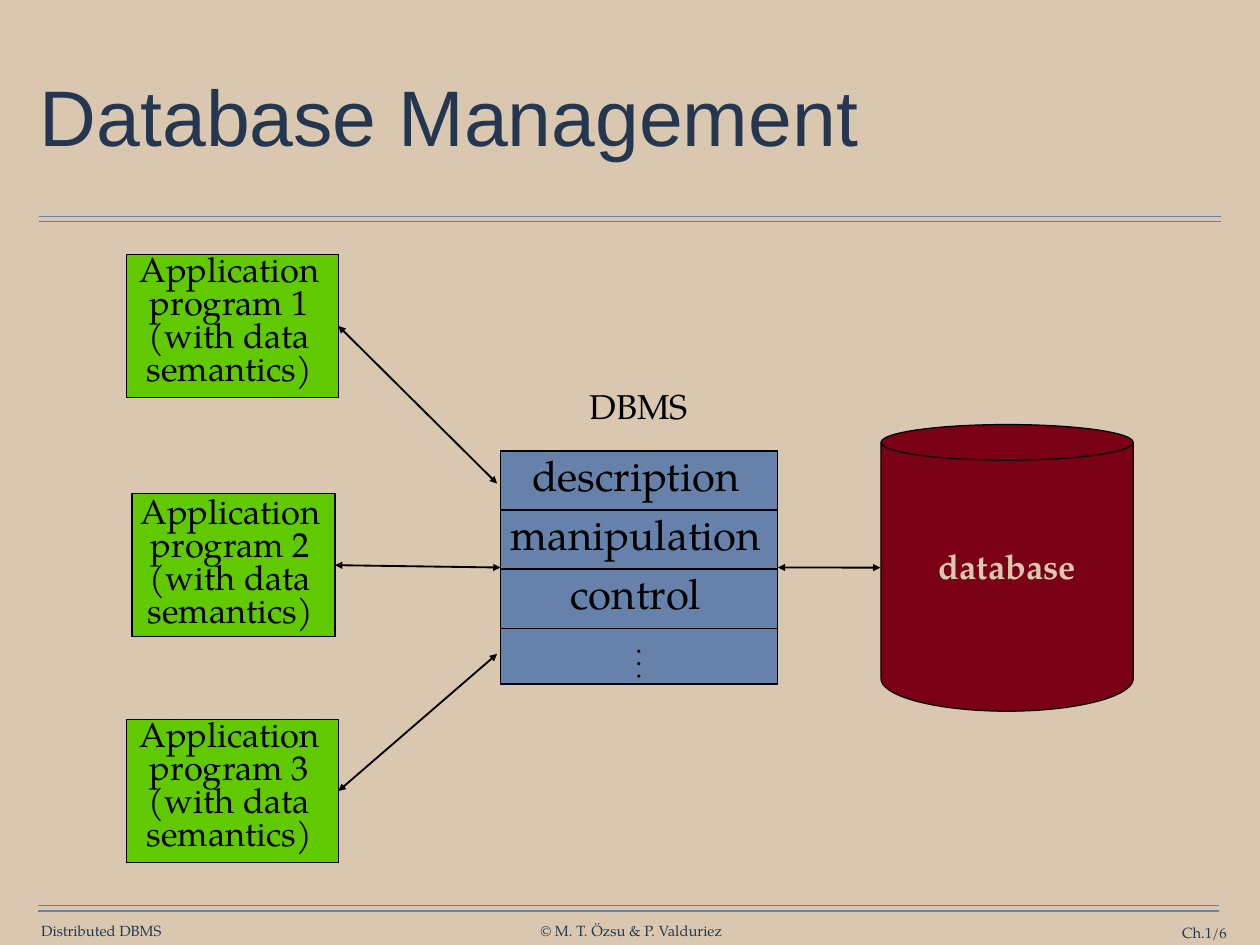
"""Build the slide that shows programs sharing a database through a DBMS."""
from math import cos, pi, sin

from lxml import etree
from pptx import Presentation
from pptx.dml.color import RGBColor
from pptx.enum.shapes import MSO_CONNECTOR, MSO_SHAPE
from pptx.enum.text import MSO_ANCHOR, PP_ALIGN
from pptx.oxml.ns import qn
from pptx.util import Pt

STRAIGHT = MSO_CONNECTOR.STRAIGHT
RECT, OVAL = MSO_SHAPE.RECTANGLE, MSO_SHAPE.OVAL
TOP, MIDDLE = MSO_ANCHOR.TOP, MSO_ANCHOR.MIDDLE
LEFT, CENTER, RIGHT = PP_ALIGN.LEFT, PP_ALIGN.CENTER, PP_ALIGN.RIGHT

SAND = RGBColor(0xD9, 0xC8, 0xAF)
NAVY = RGBColor(0x25, 0x37, 0x50)
BLUE = RGBColor(0x66, 0x82, 0xAA)
GREEN = RGBColor(0x60, 0xC9, 0x00)
WINE = RGBColor(0x79, 0x00, 0x15)
BLACK = RGBColor(0, 0, 0)
SERIF = "TeX Gyre Pagella"

deck = Presentation()
deck.slide_width, deck.slide_height = Pt(1024), Pt(768)
slide = deck.slides.add_slide(deck.slide_layouts[6])
slide.background.fill.solid()
slide.background.fill.fore_color.rgb = SAND
shapes = slide.shapes


def write(shape, lines, size, color=BLACK, font=SERIF, align=CENTER,
          anchor=TOP, pad=(7.2, 3.6, 7.2, 3.6), space=1.0, bold=False):
    """Fill a shape with one paragraph per line."""
    frame = shape.text_frame
    frame.word_wrap = False
    frame.vertical_anchor = anchor
    (frame.margin_left, frame.margin_top,
     frame.margin_right, frame.margin_bottom) = map(Pt, pad)
    frame.text = "\n".join(lines)
    for para in frame.paragraphs:
        para.alignment = align
        para.line_spacing = space
        para.font.name, para.font.size = font, Pt(size)
        para.font.bold = bold
        para.font.color.rgb = color


def draw(x1, y1, x2, y2, color=BLACK, width=1, arrow=False):
    """Draw a line, with arrowheads at both ends on request."""
    line = shapes.add_connector(STRAIGHT, Pt(x1), Pt(y1), Pt(x2), Pt(y2))
    line.line.color.rgb = color
    line.line.width = Pt(width)
    if arrow:
        for tag in ("a:headEnd", "a:tailEnd"):
            etree.SubElement(line.line._get_or_add_ln(), qn(tag), type="triangle")
    etree.SubElement(line._element.spPr, qn("a:effectLst"))
    return line


for x, y, width in ((31.7, 175.7, 960.3), (31, 736, 960)):
    for step in (0, 4.3):
        draw(x, y + step, x + width, y + step, BLUE)

for text, x, y, width, align in (
        ("Distributed DBMS", 33.5, 749.5, 100, LEFT),
        ("© M. T. Özsu & P. Valduriez", 438, 749.5, 150, CENTER),
        ("Ch.1/6", 886.5, 751, 110.5, RIGHT)):
    note = shapes.add_textbox(Pt(x), Pt(y), Pt(width), Pt(14.4))
    write(note, [text], 12, NAVY, align=align, anchor=MIDDLE, pad=(0, 0, 0, 0))

title = shapes.add_textbox(Pt(28), Pt(35), Pt(968), Pt(127))
write(title, ["Database Management"], 64, NAVY, "Arial", LEFT, MIDDLE,
      (4.3, 4.3, 4.3, 4.3), 0.9)

mid, base, half, drop = 818.5, 551.5, 102.5, 26.5
curve = [(Pt(mid + half * cos(pi * i / 40)), Pt(base + drop * sin(pi * i / 40)))
         for i in range(41)]
pen = shapes.build_freeform(Pt(mid - half), Pt(360))
pen.add_line_segments([(Pt(mid + half), Pt(360))] + curve, close=True)
store = pen.convert_to_shape()
write(store, ["database"], 28, SAND, anchor=MIDDLE, pad=(0, 0, 0, 18), bold=True)
lid = shapes.add_shape(OVAL, Pt(mid - half), Pt(345), Pt(2 * half), Pt(29))

label = shapes.add_textbox(Pt(471.5), Pt(309.6), Pt(95), Pt(41))
write(label, ["DBMS"], 28)
left, top, wide, row = 406.8, 366.5, 225.4, 48
dbms = shapes.add_shape(RECT, Pt(left), Pt(top), Pt(wide), Pt(189.5))
painted = [(store, WINE), (lid, WINE), (dbms, BLUE)]
for i, task in enumerate(("description", "manipulation", "control")):
    y = top + i * row
    box = shapes.add_textbox(Pt(404), Pt(y - 4.3), Pt(wide), Pt(row))
    write(box, [task], 34)
    draw(left, y + row, left + wide, y + row)
    dot = shapes.add_shape(OVAL, Pt(518.4), Pt(528.5 + i * 10.1), Pt(1.5), Pt(1.5))
    painted.append((dot, BLACK))

for i, (x, y, width, inset, goal) in enumerate((
        (103, 206.6, 172, 1.4, 393),
        (107.3, 401, 165, 3.6, 461.3),
        (103, 584.6, 172, 1.4, 531.4)), 1):
    app = shapes.add_shape(RECT, Pt(x), Pt(y), Pt(width), Pt(116.6))
    write(app, ["Application", f"program {i}", "(with data", "semantics)"], 28,
          pad=(4.7, inset, 9.7, 3.6), space=0.8)
    painted.append((app, GREEN))
    arrow = draw(x + width, y + 58.3, 404, goal, width=1.5, arrow=True)
    arrow.begin_connect(app, 3)
    if i == 2:
        arrow.end_connect(dbms, 1)

arrow = draw(left + wide, 461.3, 715.5, 461.3, width=1.5, arrow=True)
arrow.begin_connect(dbms, 3)

for shape, fill in painted:
    shape.shadow.inherit = False
    shape.fill.solid()
    shape.fill.fore_color.rgb = fill
    shape.line.color.rgb = BLACK
    shape.line.width = Pt(1)

deck.save("out.pptx")
